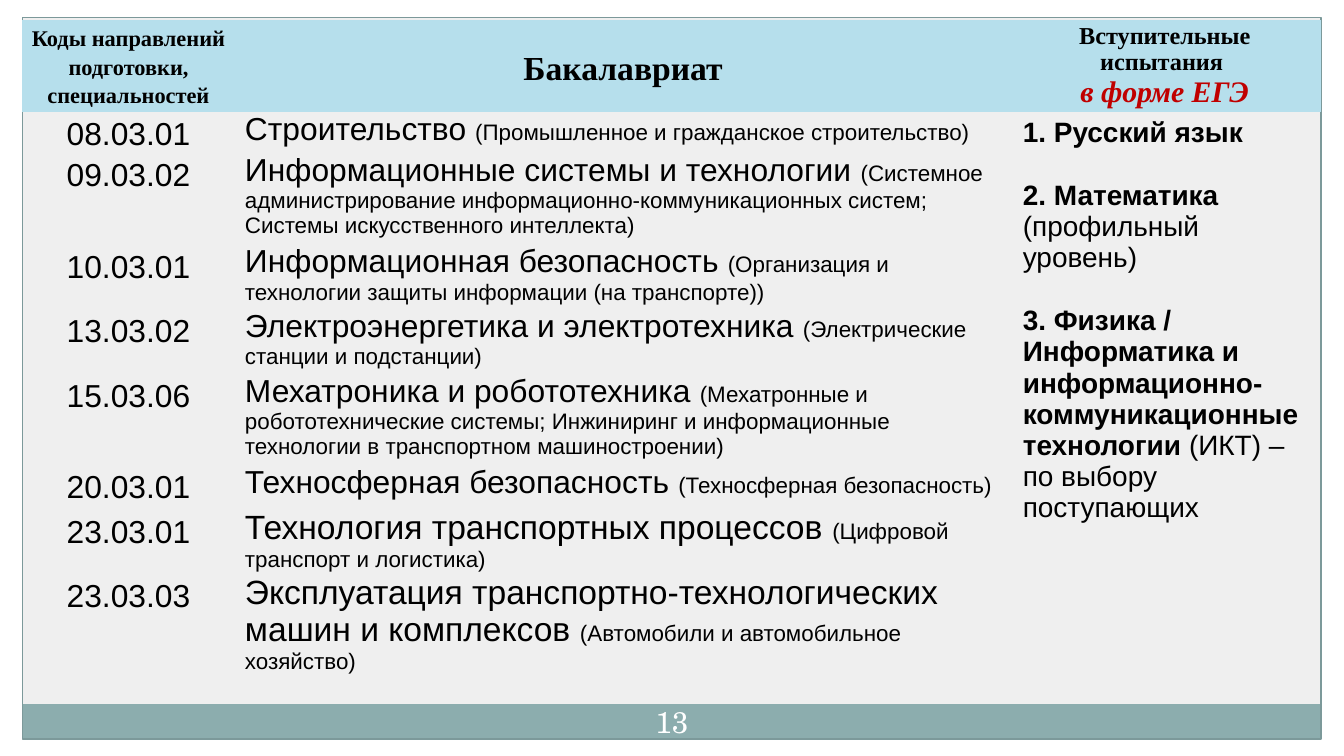
from pptx import Presentation, util as u
from pptx.dml.color import RGBColor
from pptx.enum import shapes, text

THEME = {
    "back": "EFEFEF", "white": "FFFFFF", "bar": "8CADAE", "frame": "7C999A",
    "header": "B6DFEC", "ink": "000000", "accent": "C00000",
    "body": "Arial", "head": "Times New Roman", "number": "TeX Gyre Schola",
    "code": 17, "name": 17, "large": 18, "detail": 12, "exam": 15, "page": 16,
}
NO_GRID = "{2D5ABB26-0587-4C30-8999-92F81FD0307C}"
W, H = 25.4, 14.29
EDGE, TOP, BOTTOM, BAR = 0.43, 0.33, 0.32, 0.64
TABLE_LEFT, TABLE_TOP = 0.41, 0.38
COLS = [4.09, 14.6, 5.87]
HEADER_H = 1.73
CELL_INSETS, EXAM_INSETS = (0.13, 0, 0.18, 0), (0.23, 0.1, 0.23, 0.1)
EXAM_GAP = 17.2
PAGE = "13"

HEADERS = [
    (1.15, [("Коды направлений подготовки, специальностей", 12, "ink", False)]),
    (1.15, [("Бакалавриат", 18, "ink", False)]),
    (1, [("Вступительные испытания ", 13, "ink", False),
         ("в форме ЕГЭ", 16, "accent", True)]),
]
PROGRAMS = [
    ("08.03.01", "Строительство", "name",
     "(Промышленное и гражданское строительство)", 0.61),
    ("09.03.02", "Информационные системы и технологии", "name",
     "(Системное администрирование информационно-коммуникационных систем; "
     "Системы искусственного интеллекта)", 1.73),
    ("10.03.01", "Информационная безопасность", "name",
     "(Организация и технологии защиты информации (на транспорте))", 1.22),
    ("13.03.02", "Электроэнергетика и электротехника", "name",
     "(Электрические станции и подстанции)", 1.22),
    ("15.03.06", "Мехатроника и робототехника", "name",
     "(Мехатронные и робототехнические системы; Инжиниринг и информационные "
     "технологии в транспортном машиностроении)", 1.73),
    ("20.03.01", "Техносферная безопасность", "name",
     "(Техносферная безопасность)", 0.84),
    ("23.03.01", "Технология транспортных процессов", "large",
     "(Цифровой транспорт и логистика)", 1.22),
    ("23.03.03", "Эксплуатация транспортно-технологических машин и комплексов",
     "large", "(Автомобили и автомобильное хозяйство)", 1.98),
]
EXAMS = [
    ("1. Русский язык", ""),
    ("2. Математика", " (профильный уровень)"),
    ("3. Физика / Информатика и информационно-коммуникационные технологии ",
     "(ИКТ) – по выбору поступающих"),
]


def color(key):
    return RGBColor.from_string(THEME[key])


def rect(s, x, y, w, h, fill=None, line=None):
    sp = s.shapes.add_shape(shapes.MSO_SHAPE.RECTANGLE,
                            u.Cm(x), u.Cm(y), u.Cm(w), u.Cm(h))
    sp.shadow.inherit = False
    if fill:
        sp.fill.solid()
        sp.fill.fore_color.rgb = color(fill)
    else:
        sp.fill.background()
    if line:
        sp.line.color.rgb = color(line)
        sp.line.width = u.Pt(0.75)
    else:
        sp.line.fill.background()


def add_run(p, words, size, font="body", ink="ink", bold=False, italic=False):
    r = p.add_run()
    r.text = words
    f = r.font
    f.name, f.size, f.bold, f.italic = THEME[font], u.Pt(size), bold, italic
    f.color.rgb = color(ink)


def paragraph(tf, i, spacing=None, center=False):
    p = tf.paragraphs[0] if i == 0 else tf.add_paragraph()
    p.line_spacing = spacing
    if center:
        p.alignment = text.PP_ALIGN.CENTER
    return p


def set_insets(box, insets):
    box.margin_left, box.margin_top, box.margin_right, box.margin_bottom = map(u.Cm, insets)


def add_background(s):
    s.background.fill.solid()
    s.background.fill.fore_color.rgb = color("back")
    rect(s, 0, H - BOTTOM, W, BOTTOM, "white")
    rect(s, 0, 0, W, TOP, "white")
    for x in (W - EDGE, 0):
        rect(s, x, 0, EDGE, H, "white")
    rect(s, EDGE, H - BOTTOM - BAR - 0.02, W - 2 * EDGE, BAR, "bar")
    rect(s, EDGE, TOP, W - 2 * EDGE, H - TOP - BOTTOM, line="frame")


def add_programs(s):
    heights = [HEADER_H] + [row[-1] for row in PROGRAMS]
    frame = s.shapes.add_table(len(heights), len(COLS), u.Cm(TABLE_LEFT), u.Cm(TABLE_TOP),
                               u.Cm(sum(COLS)), u.Cm(sum(heights)))
    table = frame.table
    table.horz_banding = table.first_row = False
    table._tbl.tblPr.find("{*}tableStyleId").text = NO_GRID
    for col, w in zip(table.columns, COLS):
        col.width = u.Cm(w)
    for row, h in zip(table.rows, heights):
        row.height = u.Cm(h)
    for cell in table.iter_cells():
        set_insets(cell, CELL_INSETS)
        cell.fill.background()

    for c, (spacing, lines) in enumerate(HEADERS):
        cell = table.cell(0, c)
        cell.fill.solid()
        cell.fill.fore_color.rgb = color("header")
        cell.vertical_anchor = text.MSO_ANCHOR.MIDDLE
        for i, (words, size, ink, italic) in enumerate(lines):
            p = paragraph(cell.text_frame, i, spacing, True)
            add_run(p, words, size, "head", ink, True, italic)

    for n, (code, name, size, detail, _) in enumerate(PROGRAMS, 1):
        p = paragraph(table.cell(n, 0).text_frame, 0, 1.15, True)
        add_run(p, code, THEME["code"])
        p = paragraph(table.cell(n, 1).text_frame, 0)
        add_run(p, name + " ", THEME[size])
        add_run(p, detail, THEME["detail"])

    exams = table.cell(1, 2)
    exams.merge(table.cell(len(PROGRAMS), 2))
    set_insets(exams, EXAM_INSETS)
    for i, (subject, note) in enumerate(EXAMS):
        p = paragraph(exams.text_frame, i)
        if i:
            p.space_before = u.Pt(EXAM_GAP)
        add_run(p, subject, THEME["exam"], bold=True)
        if note:
            add_run(p, note, THEME["exam"])


def add_page_number(s):
    w, h = 1.7, 0.91
    sp = s.shapes.add_textbox(u.Cm((W - w) / 2), u.Cm(13.18), u.Cm(w), u.Cm(h))
    tf = sp.text_frame
    tf.word_wrap = True
    tf.vertical_anchor = text.MSO_ANCHOR.MIDDLE
    set_insets(tf, [0.13] * 4)
    add_run(paragraph(tf, 0, center=True), PAGE, THEME["page"], "number", "white")


def main():
    prs = Presentation()
    prs.slide_width, prs.slide_height = u.Cm(W), u.Cm(H)
    s = prs.slides.add_slide(prs.slide_layouts[6])
    add_background(s)
    add_programs(s)
    add_page_number(s)
    prs.save("out.pptx")


if __name__ == "__main__":
    main()
